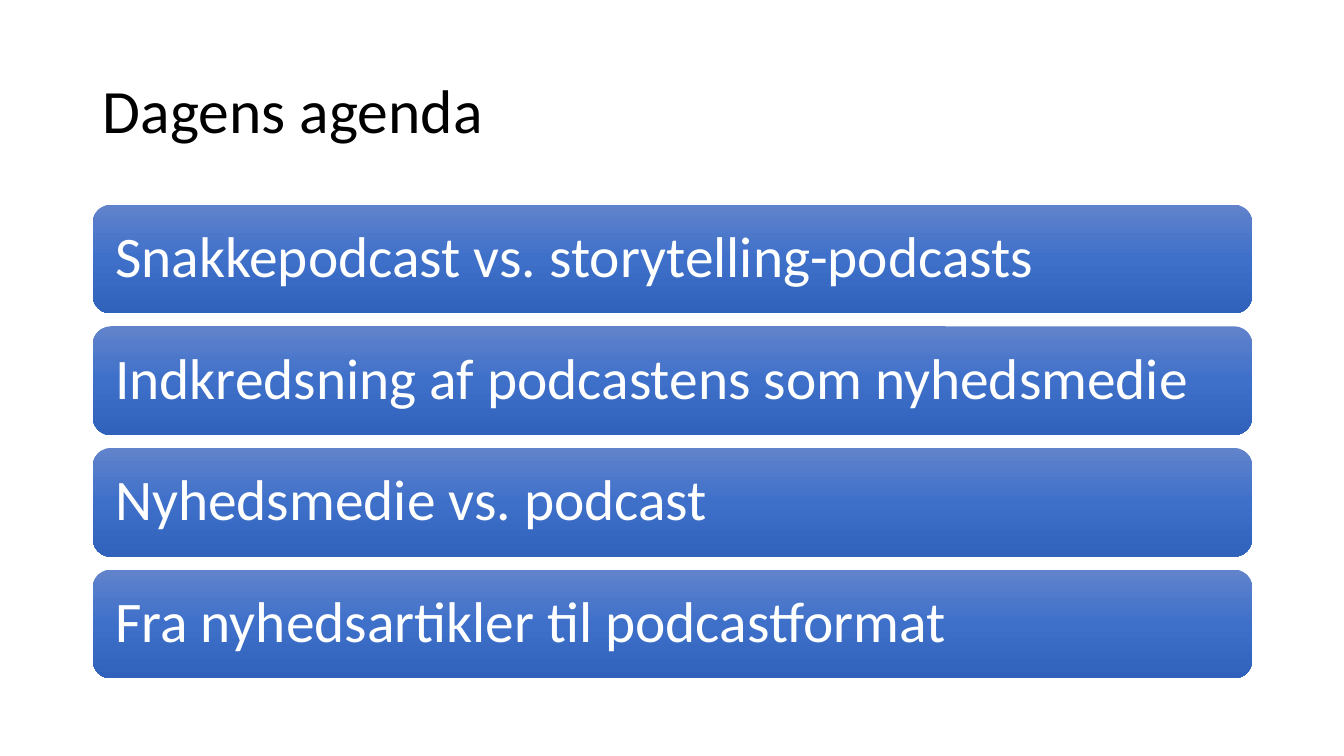
from copy import deepcopy

from pptx import Presentation
from pptx import util as u
from pptx.dml.color import RGBColor
from pptx.enum import shapes, text
from pptx.oxml.ns import qn

COLOURS = {
    "title": "000000",
    "bar_text": "FFFFFF",
    "bar_top": "6183CB",
    "bar_middle": "3E70CA",
    "bar_bottom": "3062BB",
}
AGENDA = [
    "Snakkepodcast vs. storytelling-podcasts",
    "Indkredsning af podcastens som nyhedsmedie",
    "Nyhedsmedie vs. podcast",
    "Fra nyhedsartikler til podcastformat",
]
LEFT, WIDTH = 0.92, 11.5
FIRST_TOP, LAST_TOP, BAR_HEIGHT = 2.03, 5.65, 1.08


class AgendaSlide:
    font_name = "Calibri"

    def __init__(self, presentation):
        self.slide = presentation.slides.add_slide(presentation.slide_layouts[5])

    def set_text(self, shape, wording, size, colour):
        frame = shape.text_frame
        frame.text = wording
        frame.word_wrap = True
        frame.auto_size = text.MSO_AUTO_SIZE.NONE
        frame.vertical_anchor = text.MSO_ANCHOR.MIDDLE
        paragraph = frame.paragraphs[0]
        paragraph.alignment = text.PP_ALIGN.LEFT
        paragraph.line_spacing = 0.9
        font = paragraph.runs[0].font
        font.name = self.font_name
        font.size = u.Pt(size)
        font.color.rgb = RGBColor.from_string(COLOURS[colour])

    def title(self, wording, top, height):
        shape = self.slide.shapes.title
        shape.left, shape.top = u.Inches(LEFT), u.Inches(top)
        shape.width, shape.height = u.Inches(WIDTH), u.Inches(height)
        self.set_text(shape, wording, 44, "title")

    def gradient(self, shape, stops):
        shape.fill.gradient()
        shape.fill.gradient_angle = 270  # counter-clockwise: top to bottom
        # A new gradient has two stops; add the third
        stop_list = shape._element.spPr.find(qn("a:gradFill")).find(qn("a:gsLst"))
        stop_list.append(deepcopy(stop_list[-1]))
        for stop, (position, colour) in zip(shape.fill.gradient_stops, stops):
            stop.position = position
            stop.color.rgb = RGBColor.from_string(COLOURS[colour])

    def bar(self, wording, top):
        shape = self.slide.shapes.add_shape(
            shapes.MSO_SHAPE.ROUNDED_RECTANGLE,
            u.Inches(LEFT), u.Inches(top), u.Inches(WIDTH), u.Inches(BAR_HEIGHT))
        shape.shadow.inherit = False
        shape.line.fill.background()
        self.gradient(shape, [(0, "bar_top"), (0.5, "bar_middle"), (1, "bar_bottom")])
        frame = shape.text_frame
        frame.margin_left = frame.margin_right = u.Inches(0.17)
        frame.margin_top = frame.margin_bottom = u.Inches(0.17)
        self.set_text(shape, wording, 41, "bar_text")


def main():
    presentation = Presentation()
    presentation.slide_width = u.Inches(13.33)
    presentation.slide_height = u.Inches(7.5)
    agenda = AgendaSlide(presentation)

    # Title
    agenda.title("Dagens agenda", 0.4, 1.45)

    # Agenda bars, evenly spaced
    pitch = (LAST_TOP - FIRST_TOP) / (len(AGENDA) - 1)
    for index, wording in enumerate(AGENDA):
        agenda.bar(wording, FIRST_TOP + index * pitch)

    presentation.save("out.pptx")


if __name__ == "__main__":
    main()
